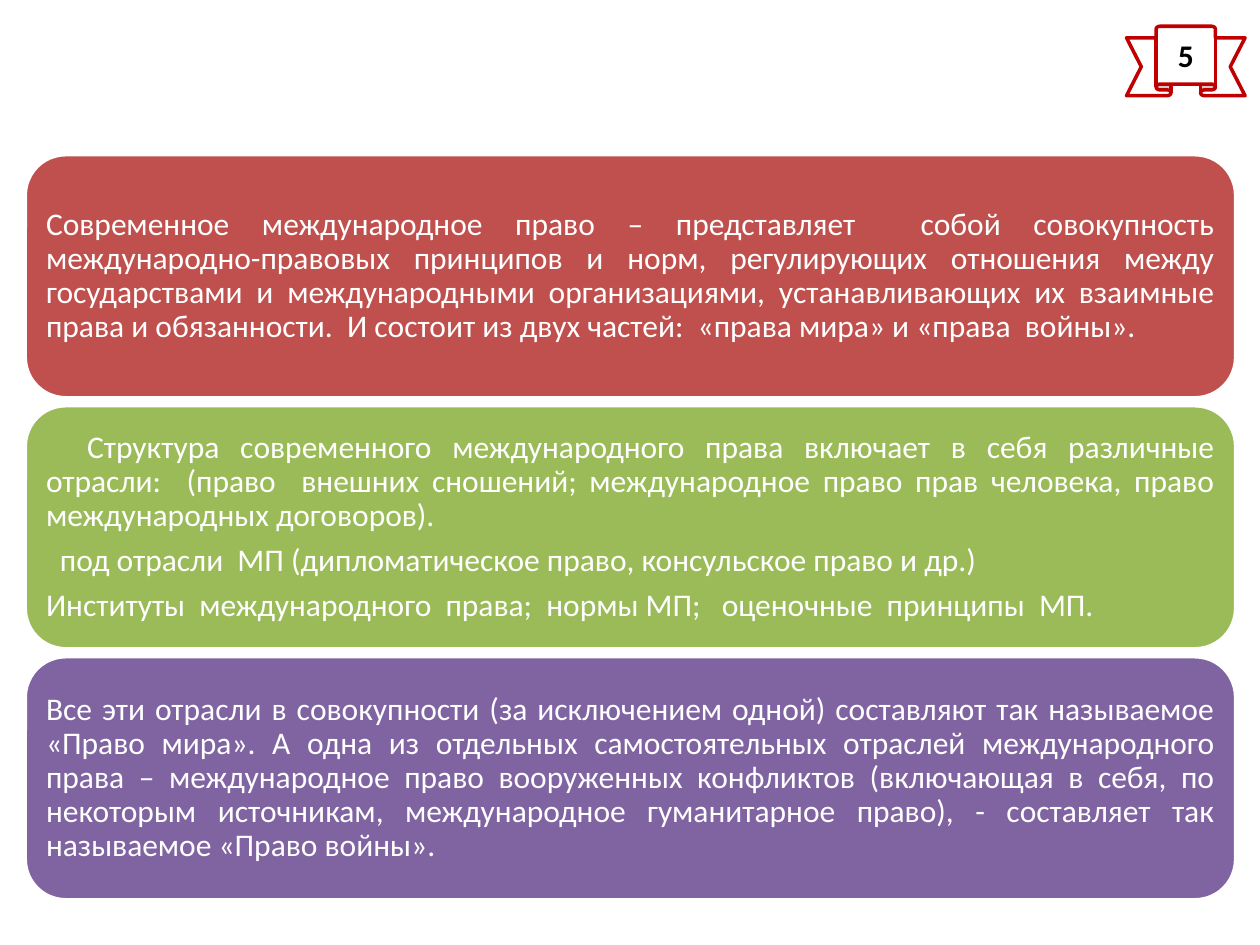
from dataclasses import dataclass

from pptx import Presentation
from pptx.dml.color import RGBColor
from pptx.enum.shapes import MSO_SHAPE
from pptx.enum.text import MSO_ANCHOR, PP_ALIGN
from pptx.util import Cm, Pt

ROUNDED = MSO_SHAPE.ROUNDED_RECTANGLE
RIBBON = MSO_SHAPE.UP_RIBBON
MIDDLE = MSO_ANCHOR.MIDDLE
CENTER = PP_ALIGN.CENTER
JUSTIFY = PP_ALIGN.JUSTIFY
BLANK_LAYOUT = 6


@dataclass(frozen=True)
class Theme:
    font: str = "Calibri"
    text_size: int = 18
    line_width: int = 2
    white: str = "FFFFFF"
    black: str = "000000"
    ribbon_line: str = "C00000"
    red: str = "C0504D"
    green: str = "9BBB59"
    purple: str = "8064A2"


THEME = Theme()

# Each panel: fill colour and paragraphs as (text, first-line indent in cm)
PANELS = [
    (THEME.red, [
        ("Современное международное право – представляет  собой совокупность "
         "международно-правовых принципов и норм, регулирующих отношения между "
         "государствами и международными организациями, устанавливающих их взаимные "
         "права и обязанности.  И состоит из двух частей:  «права мира» и "
         "«права  войны».", 0),
    ]),
    (THEME.green, [
        ("Структура современного международного права включает в себя различные "
         "отрасли:  (право  внешних сношений; международное право прав человека, "
         "право международных договоров).", 0.83),
        ("под отрасли  МП (дипломатическое право, консульское право и др.)", 0.28),
        ("Институты  международного  права;  нормы МП;   оценочные  принципы  МП.", 0),
    ]),
    (THEME.purple, [
        ("Все эти отрасли в совокупности (за исключением одной) составляют так "
         "называемое «Право мира». А одна из отдельных самостоятельных отраслей "
         "международного права – международное право вооруженных конфликтов "
         "(включающая в себя, по некоторым источникам, международное гуманитарное "
         "право), - составляет так называемое «Право войны».", 0),
    ]),
]
PANEL_LEFT, PANEL_TOP = 0.51, 3.12
PANEL_WIDTH, PANEL_HEIGHT = 24.4, 4.9
PANEL_STEP = 5.06
PANEL_INSET = 0.18


def add_box(slide, kind, left, top, width, height, fill, line):
    shape = slide.shapes.add_shape(kind, Cm(left), Cm(top), Cm(width), Cm(height))
    shape.shadow.inherit = False
    shape.fill.solid()
    shape.fill.fore_color.rgb = RGBColor.from_string(fill)
    shape.line.color.rgb = RGBColor.from_string(line)
    shape.line.width = Pt(THEME.line_width)
    frame = shape.text_frame
    frame.word_wrap = True
    frame.vertical_anchor = MIDDLE
    return shape


def write_text(paragraph, text, color, align, bold=False, indent=0,
               line_spacing=None, space_after=None):
    paragraph.alignment = align
    paragraph.line_spacing = line_spacing
    paragraph.space_after = space_after
    if indent:
        paragraph._p.get_or_add_pPr().set("indent", str(Cm(indent)))
    run = paragraph.add_run()
    run.text = text
    run.font.name = THEME.font
    run.font.size = Pt(THEME.text_size)
    run.font.bold = bold
    run.font.color.rgb = RGBColor.from_string(color)


def add_page_ribbon(slide, number):
    ribbon = add_box(slide, RIBBON, 22.71, 0.53, 2.39, 1.4,
                     THEME.white, THEME.ribbon_line)
    write_text(ribbon.text_frame.paragraphs[0], number, THEME.black, CENTER, bold=True)


def add_panel(slide, top, fill, paragraphs):
    panel = add_box(slide, ROUNDED, PANEL_LEFT, top, PANEL_WIDTH, PANEL_HEIGHT,
                    fill, THEME.white)
    frame = panel.text_frame
    frame.margin_left = frame.margin_right = Cm(PANEL_INSET)
    frame.margin_top = frame.margin_bottom = Cm(PANEL_INSET)
    for index, (text, indent) in enumerate(paragraphs):
        paragraph = frame.add_paragraph() if index else frame.paragraphs[0]
        write_text(paragraph, text, THEME.white, JUSTIFY, indent=indent,
                   line_spacing=0.9, space_after=Pt(6.3))


def main():
    presentation = Presentation()
    presentation.slide_width = Cm(25.4)
    presentation.slide_height = Cm(19.05)
    slide = presentation.slides.add_slide(presentation.slide_layouts[BLANK_LAYOUT])

    # Page number
    add_page_ribbon(slide, "5")

    # Stacked text panels
    for row, (fill, paragraphs) in enumerate(PANELS):
        add_panel(slide, PANEL_TOP + row * PANEL_STEP, fill, paragraphs)

    presentation.save("out.pptx")


if __name__ == "__main__":
    main()
